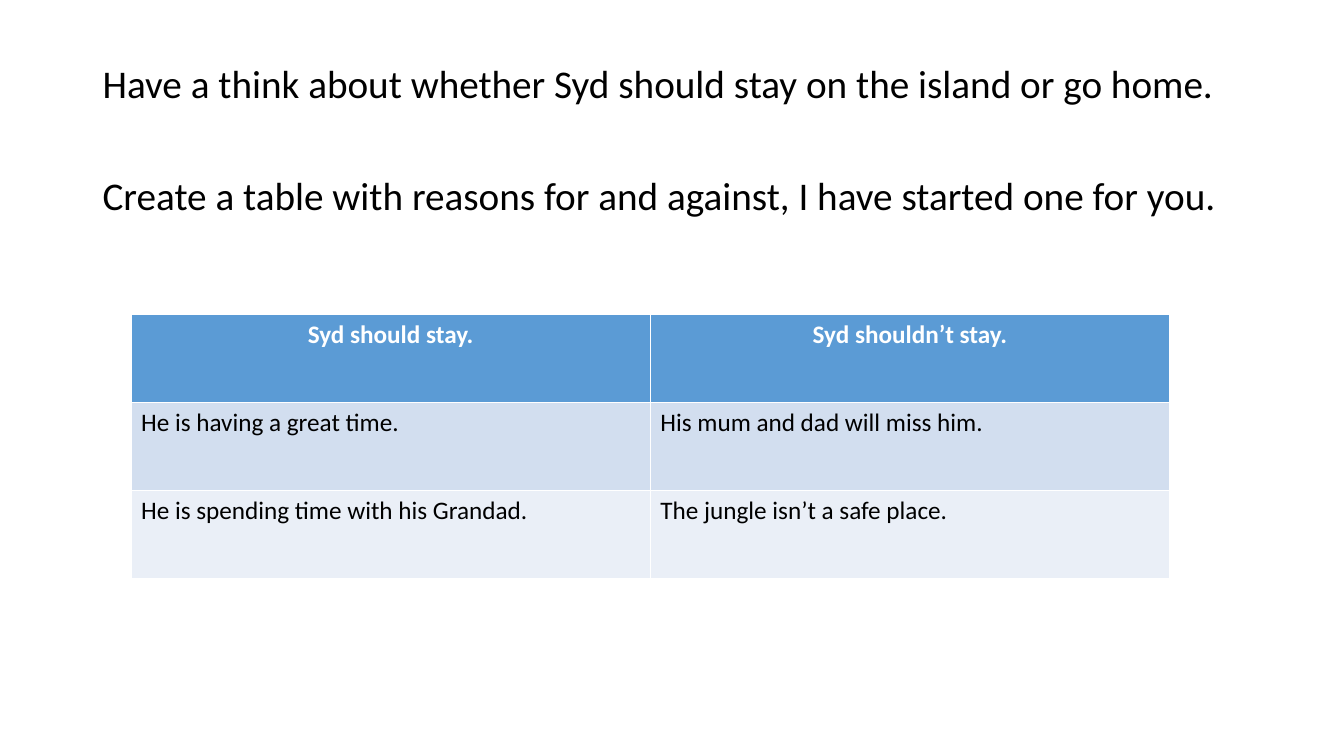
from pptx import Presentation
from pptx.dml.color import RGBColor
from pptx.enum.text import PP_ALIGN
from pptx.util import Emu, Pt

PX = 9144  # 100 px to the inch
FONT = "Calibri"
BLACK, WHITE, HEADER = "000000", "FFFFFF", "5B9BD5"
BANDS = ["D2DEEF", "EAEFF7"]

TASKS = [
    "Have a think about whether Syd should stay on the island or go home.",
    "Create a table with reasons for and against, I have started one for you.",
]
REASONS = [
    ["Syd should stay.", "Syd shouldn’t stay."],
    ["He is having a great time.", "His mum and dad will miss him."],
    ["He is spending time with his Grandad.", "The jungle isn’t a safe place."],
]


def px(n):
    return Emu(n * PX)


def color(value):
    return RGBColor.from_string(value)


def add_run(p, text, size, fill, bold=False):
    r = p.add_run()
    r.text = text
    r.font.name = FONT
    r.font.size = Pt(size)
    r.font.bold = bold
    r.font.color.rgb = color(fill)


def add_tasks(s, x, y, w, h):
    tf = s.shapes.add_textbox(px(x), px(y), px(w), px(h)).text_frame
    tf.word_wrap = True
    for i, task in enumerate(TASKS):
        p = tf.add_paragraph() if i else tf.paragraphs[0]
        p.line_spacing = 0.9
        p.space_before = Pt(50 if i else 0)
        add_run(p, task, 28, BLACK)


def add_reasons(s, x, y, w, h):
    """Table whose first row is the header; the rows below alternate in colour."""
    table = s.shapes.add_table(len(REASONS), len(REASONS[0]),
                               px(x), px(y), px(w), px(h)).table
    for i, row in enumerate(REASONS):
        is_header = i == 0
        for j, text in enumerate(row):
            cell = table.cell(i, j)
            cell.fill.solid()
            cell.fill.fore_color.rgb = color(HEADER if is_header else BANDS[(i - 1) % 2])
            p = cell.text_frame.paragraphs[0]
            p.alignment = PP_ALIGN.CENTER if is_header else PP_ALIGN.LEFT
            add_run(p, text, 18, WHITE if is_header else BLACK, bold=is_header)


def main():
    prs = Presentation()
    prs.slide_width, prs.slide_height = px(1333), px(750)
    s = prs.slides.add_slide(prs.slide_layouts[6])
    add_tasks(s, 92, 59, 1150, 617)
    add_reasons(s, 130, 312, 1030, 262)
    prs.save("out.pptx")


if __name__ == "__main__":
    main()
